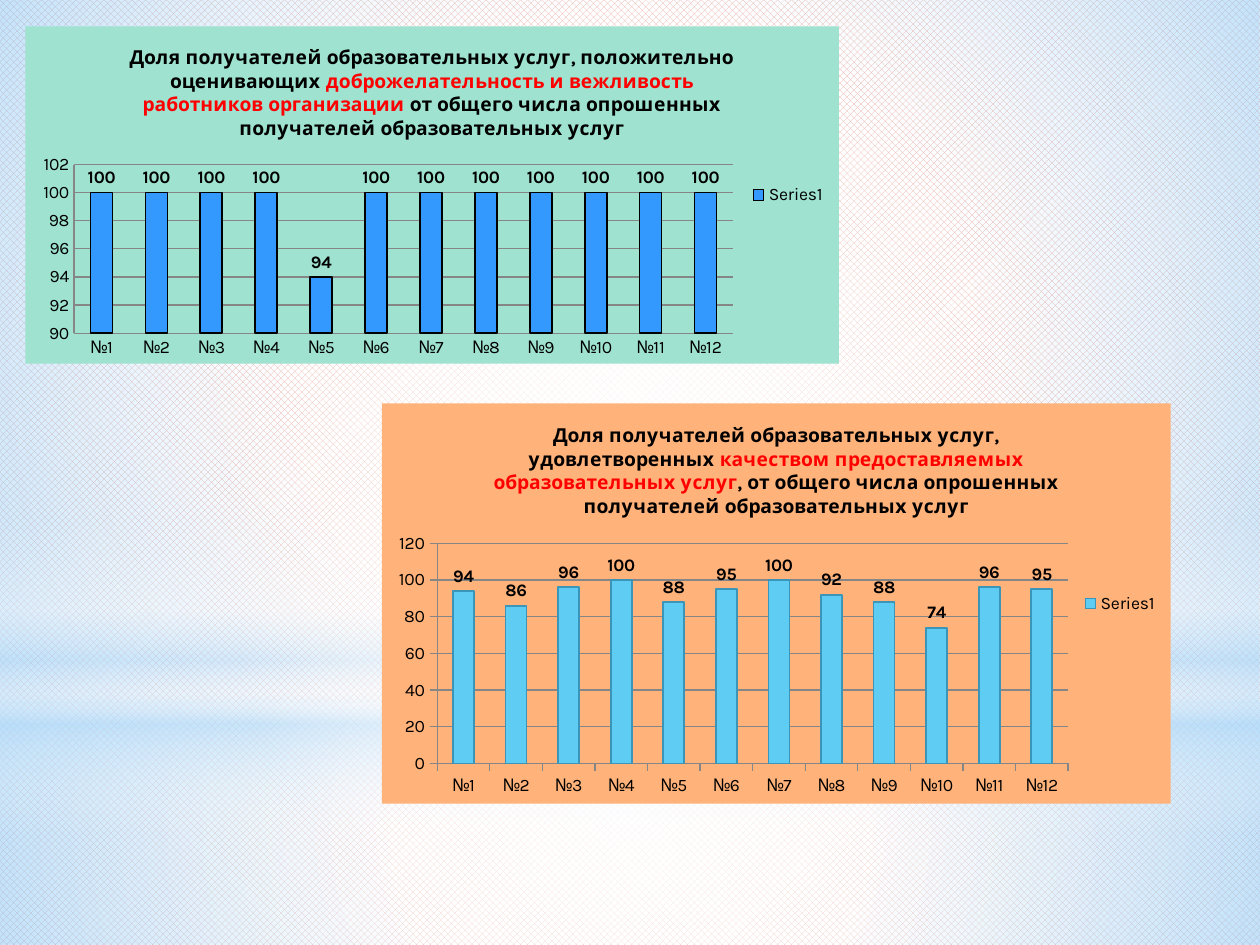
import pptx
import pptx.util
import pptx.chart.data
import pptx.dml.color
import pptx.enum.chart
import pptx.enum.dml
import pptx.enum.shapes
import pptx.oxml
import pptx.oxml.ns

COLORS = {
    "white": "FFFFFF", "sky": "B4DCFA", "rust": "C3260C", "black": "000000",
    "red": "FF0000", "grid": "868686", "mint": "9EE2CF", "peach": "FFB37A",
    "blue": "3399FF", "cyan": "5ECCF3", "cyan_edge": "3A95B8",
}
FONT = "Karla"
SCHOOLS = [f"№{number}" for number in range(1, 13)]
TICK = pptx.enum.chart.XL_TICK_MARK

POLITENESS = {
    "title": [
        ("Доля получателей образовательных услуг, положительно оценивающих ", "black"),
        ("доброжелательность и вежливость работников организации", "red"),
        (" от общего числа опрошенных получателей образовательных услуг", "black"),
    ],
    "values": [100, 100, 100, 100, 94, 100, 100, 100, 100, 100, 100, 100],
    "scale": (90, 102, 2), "tick": TICK.NONE,
    "panel": "mint", "bar": "blue", "edge": "black",
    "plot": {"x": 0.06, "y": 0.41, "w": 0.81, "h": 0.5},
}
QUALITY = {
    "title": [
        ("Доля получателей образовательных услуг, удовлетворенных ", "black"),
        ("качеством предоставляемых образовательных услуг", "red"),
        (", от общего числа опрошенных получателей образовательных услуг", "black"),
    ],
    "values": [94, 86, 96, 100, 88, 95, 100, 92, 88, 74, 96, 95],
    "scale": (0, 120, 20), "tick": TICK.OUTSIDE,
    "panel": "peach", "bar": "cyan", "edge": "cyan_edge",
    "plot": {"x": 0.07, "y": 0.35, "w": 0.8, "h": 0.55},
}


def rgb(name):
    """Return the named colour."""
    return pptx.dml.color.RGBColor.from_string(COLORS[name])


def cm_box(box):
    """Turn left, top, width and height in centimetres into lengths."""
    return [pptx.util.Cm(length) for length in box]


def style_line(line, color, width):
    """Give a line its colour and its width in points."""
    line.color.rgb = rgb(color)
    line.width = pptx.util.Pt(width)


def add_glow(page, kind, box, stops, direction):
    """Add a borderless shape with a translucent gradient of (place, colour, opacity) stops."""
    shape = page.shapes.add_shape(kind, *cm_box(box))
    shape.shadow.inherit = False
    shape.line.fill.background()
    marks = "".join(
        f'<a:gs pos="{place * 1000}"><a:srgbClr val="{COLORS[color]}">'
        f'<a:alpha val="{opacity * 1000}"/></a:srgbClr></a:gs>'
        for place, color, opacity in stops
    )
    gradient = pptx.oxml.parse_xml(
        f'<a:gradFill {pptx.oxml.ns.nsdecls("a")} rotWithShape="1">'
        f"<a:gsLst>{marks}</a:gsLst>{direction}</a:gradFill>"
    )
    shape.element.spPr.find(pptx.oxml.ns.qn("a:prstGeom")).addnext(gradient)


def draw_backdrop(page, box):
    """Draw the diamond pattern and the soft glows over the box."""
    left, top, width, height = box
    fill = page.background.fill
    fill.patterned()
    fill.pattern = pptx.enum.dml.MSO_PATTERN.SOLID_DIAMOND
    fill.fore_color.rgb = rgb("rust")
    fill.back_color.rgb = rgb("white")

    kinds = pptx.enum.shapes.MSO_SHAPE
    radial = '<a:path path="circle"><a:fillToRect l="50000" t="50000" r="50000" b="50000"/></a:path>'
    downward = '<a:lin ang="5400000" scaled="0"/>'
    horizon = 14.17
    add_glow(page, kinds.RECTANGLE, (left, top + horizon, width, height - horizon),
             [(0, "white", 91), (37, "white", 76), (100, "sky", 79)], radial)
    add_glow(page, kinds.RECTANGLE, (left, top, width, horizon),
             [(0, "white", 89), (48, "white", 62), (100, "sky", 79)], radial)
    add_glow(page, kinds.RECTANGLE, (left, top + 10.46, width, 6.35),
             [(0, "white", 0), (29, "white", 30), (45, "sky", 40),
              (55, "white", 26), (65, "sky", 60), (100, "white", 0)], downward)
    add_glow(page, kinds.OVAL, (left, top + 4.44, width, horizon),
             [(0, "white", 100), (56, "white", 0)], radial)


def write_title(chart, spans):
    """Write the chart title run by run."""
    para = chart.chart_title.text_frame.paragraphs[0]
    for text, color in spans:
        span = para.add_run()
        span.text = text
        span.font.name = FONT
        span.font.size = pptx.util.Pt(11)
        span.font.bold = True
        span.font.color.rgb = rgb(color)


def frame_chart(chart, panel, plot):
    """Fill the chart panel and fix the inner plot area."""
    chart_space = chart.element
    panel_fill = pptx.oxml.parse_xml(
        f'<c:spPr {pptx.oxml.ns.nsdecls("c", "a")}><a:solidFill>'
        f'<a:srgbClr val="{COLORS[panel]}"/></a:solidFill>'
        "<a:ln><a:noFill/></a:ln></c:spPr>"
    )
    chart_space.find(pptx.oxml.ns.qn("c:txPr")).addprevious(panel_fill)
    modes = "".join(f'<c:{side}Mode val="edge"/>' for side in "xy")
    sizes = "".join(f'<c:{side} val="{share}"/>' for side, share in plot.items())
    layout = pptx.oxml.parse_xml(
        f'<c:layout {pptx.oxml.ns.nsdecls("c")}><c:manualLayout>'
        f'<c:layoutTarget val="inner"/>{modes}{sizes}</c:manualLayout></c:layout>'
    )
    plot_area = chart_space.chart.plotArea
    for old in plot_area.findall(pptx.oxml.ns.qn("c:layout")):
        plot_area.remove(old)
    plot_area.insert(0, layout)


def draw_survey_chart(page, box, survey):
    """Draw one survey question as a titled column chart in the box."""
    data = pptx.chart.data.CategoryChartData()
    data.categories = SCHOOLS
    data.add_series("Series1", survey["values"])
    chart = page.shapes.add_chart(
        pptx.enum.chart.XL_CHART_TYPE.COLUMN_CLUSTERED, *cm_box(box), data
    ).chart
    chart.font.name = FONT
    chart.font.size = pptx.util.Pt(10)
    chart.font.color.rgb = rgb("black")
    write_title(chart, survey["title"])
    frame_chart(chart, survey["panel"], survey["plot"])

    chart.has_legend = True
    chart.legend.position = pptx.enum.chart.XL_LEGEND_POSITION.RIGHT
    chart.legend.include_in_layout = False

    for axis in (chart.category_axis, chart.value_axis):
        axis.major_tick_mark = survey["tick"]
        axis.minor_tick_mark = TICK.NONE
        style_line(axis.format.line, "grid", 0.75)
    scale = chart.value_axis
    scale.minimum_scale, scale.maximum_scale, scale.major_unit = survey["scale"]
    scale.has_major_gridlines = True
    style_line(scale.major_gridlines.format.line, "grid", 0.75)

    plot = chart.plots[0]
    plot.gap_width = 150
    plot.vary_by_categories = False
    bars = plot.series[0]
    bars.format.fill.solid()
    bars.format.fill.fore_color.rgb = rgb(survey["bar"])
    style_line(bars.format.line, survey["edge"], 1)
    labels = bars.data_labels
    labels.show_value = True
    labels.position = pptx.enum.chart.XL_LABEL_POSITION.OUTSIDE_END
    labels.font.name = FONT
    labels.font.size = pptx.util.Pt(10)
    labels.font.bold = True
    labels.font.color.rgb = rgb("black")


def main():
    """Build the slide and save the deck."""
    deck = pptx.Presentation()
    deck.slide_width, deck.slide_height = pptx.util.Cm(25.4), pptx.util.Cm(19.05)
    page = deck.slides.add_slide(deck.slide_layouts[6])
    draw_backdrop(page, (0, 0, 25.4, 19.05))
    draw_survey_chart(page, (0.51, 0.53, 16.4, 6.8), POLITENESS)
    draw_survey_chart(page, (7.7, 8.13, 15.9, 8.07), QUALITY)
    deck.save("out.pptx")


if __name__ == "__main__":
    main()
